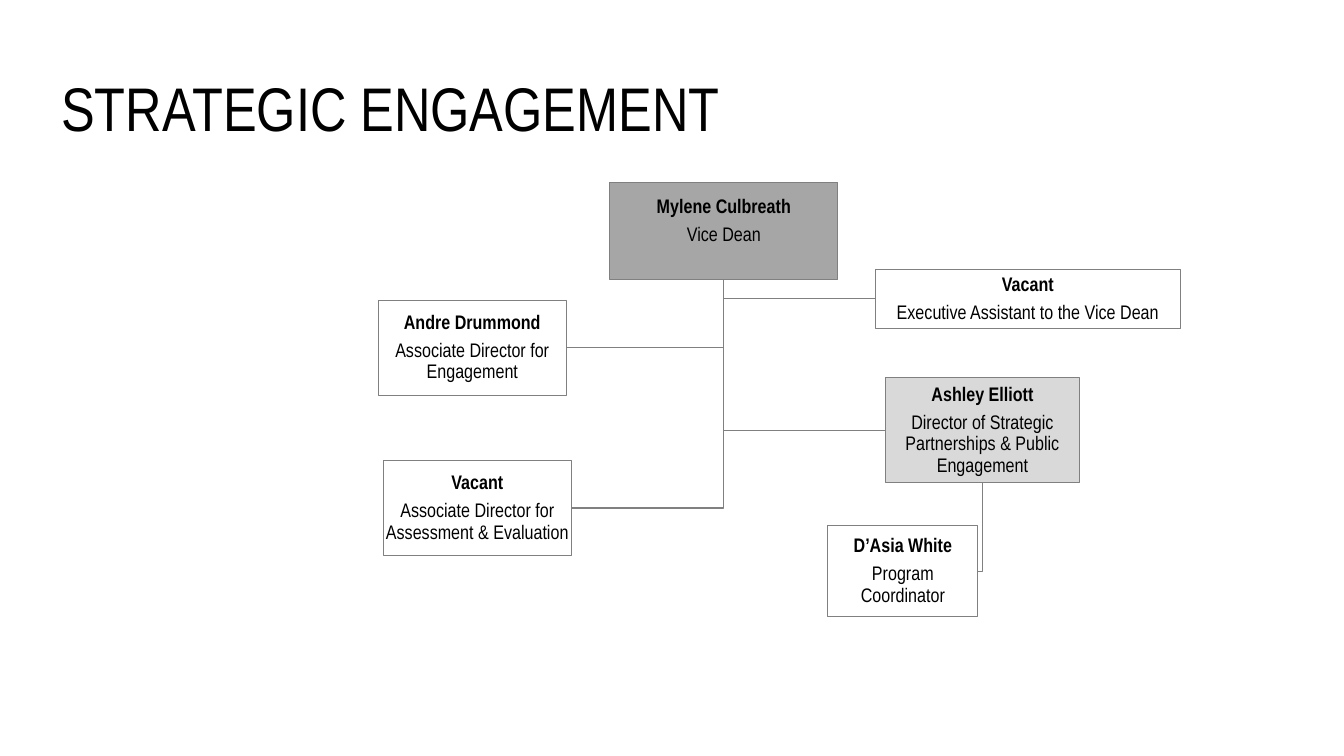
from pptx import Presentation
from pptx.dml.color import RGBColor
from pptx.enum.shapes import MSO_SHAPE
from pptx.enum.text import MSO_ANCHOR, PP_ALIGN
from pptx.util import Inches, Pt

RECTANGLE = MSO_SHAPE.RECTANGLE
MIDDLE = MSO_ANCHOR.MIDDLE
LEFT, CENTER = PP_ALIGN.LEFT, PP_ALIGN.CENTER

TITLE = "STRATEGIC ENGAGEMENT"
TITLE_BOX = (0.51, 0.38, 11.5, 1.45)

# key: name, role, (left, top, width, height), fill
POSITIONS = {
    "dean": ("Mylene Culbreath", "Vice Dean", (6.05, 1.81, 2.26, 0.96), "lead"),
    "partnerships": ("Ashley Elliott",
                     "Director of Strategic Partnerships & Public Engagement",
                     (8.78, 3.75, 1.93, 1.04), "director"),
    "coordinator": ("D’Asia White", "Program Coordinator",
                    (8.21, 5.21, 1.49, 0.91), "staff"),
    "engagement": ("Andre Drummond", "Associate Director for Engagement",
                   (3.75, 2.98, 1.87, 0.94), "staff"),
    "assessment": ("Vacant", "Associate Director for Assessment & Evaluation",
                   (3.8, 4.57, 1.87, 0.94), "staff"),
    "assistant": ("Vacant", "Executive Assistant to the Vice Dean",
                  (8.68, 2.67, 3.03, 0.59), "staff"),
}
REPORTS = [
    ("dean", "assistant"),
    ("dean", "assessment"),
    ("dean", "engagement"),
    ("partnerships", "coordinator"),
    ("dean", "partnerships"),
]

THEME = {
    "font": "Arial Narrow",
    "title_size": Pt(44),
    "label_size": Pt(14),
    "text": RGBColor(0x00, 0x00, 0x00),
    "line": RGBColor(0x80, 0x80, 0x80),
    "line_width": Pt(0.75),
    "lead": RGBColor(0xA6, 0xA6, 0xA6),
    "director": RGBColor(0xD9, 0xD9, 0xD9),
    "staff": RGBColor(0xFF, 0xFF, 0xFF),
}
INSET = 0.01
LEAD_BOTTOM_INSET = 0.23
STAFF_SPACING = {"line_spacing": 0.9, "space_after": Pt(5)}
LEAD_SPACING = {"line_spacing": 1.0, "space_after": Pt(3)}


def set_attributes(target, values):
    for name, value in values.items():
        setattr(target, name, value)


def write_paragraph(paragraph, text, size, bold, layout):
    paragraph.text = text
    set_attributes(paragraph, layout)
    set_attributes(paragraph.font, {"name": THEME["font"], "size": size, "bold": bold})
    paragraph.font.color.rgb = THEME["text"]


def outline(shape):
    shape.shadow.inherit = False
    shape.line.color.rgb = THEME["line"]
    shape.line.width = THEME["line_width"]


def add_title(slide):
    frame = slide.shapes.add_textbox(*map(Inches, TITLE_BOX)).text_frame
    set_attributes(frame, {"word_wrap": True, "vertical_anchor": MIDDLE})
    write_paragraph(frame.paragraphs[0], TITLE, THEME["title_size"], False,
                    {"alignment": LEFT, "line_spacing": 0.9})


def add_report_line(slide, manager_box, report_box):
    """Run down from the manager's bottom centre, then across to the report's near side."""
    left, top, width, height = manager_box
    trunk, start = left + width / 2, top + height
    left, top, width, height = report_box
    level = top + height / 2
    side = left if left > trunk else left + width
    builder = slide.shapes.build_freeform(Inches(trunk), Inches(start))
    builder.add_line_segments(
        [(Inches(trunk), Inches(level)), (Inches(side), Inches(level))], close=False)
    elbow = builder.convert_to_shape()
    elbow.fill.background()
    outline(elbow)


def add_position(slide, name, role, box, rank):
    shape = slide.shapes.add_shape(RECTANGLE, *map(Inches, box))
    shape.fill.solid()
    shape.fill.fore_color.rgb = THEME[rank]
    outline(shape)
    is_lead = rank == "lead"
    frame = shape.text_frame
    set_attributes(frame, {
        "word_wrap": True,
        "vertical_anchor": MIDDLE,
        "margin_left": Inches(INSET),
        "margin_right": Inches(INSET),
        "margin_top": Inches(INSET),
        "margin_bottom": Inches(LEAD_BOTTOM_INSET if is_lead else INSET),
    })
    layout = {"alignment": CENTER, **(LEAD_SPACING if is_lead else STAFF_SPACING)}
    write_paragraph(frame.paragraphs[0], name, THEME["label_size"], True, layout)
    write_paragraph(frame.add_paragraph(), role, THEME["label_size"], False, layout)


def main():
    presentation = Presentation()
    presentation.slide_width = Inches(13.33)
    presentation.slide_height = Inches(7.5)
    slide = presentation.slides.add_slide(presentation.slide_layouts[6])
    add_title(slide)
    for manager, report in REPORTS:
        add_report_line(slide, POSITIONS[manager][2], POSITIONS[report][2])
    for position in POSITIONS.values():
        add_position(slide, *position)
    presentation.save("out.pptx")


if __name__ == "__main__":
    main()
